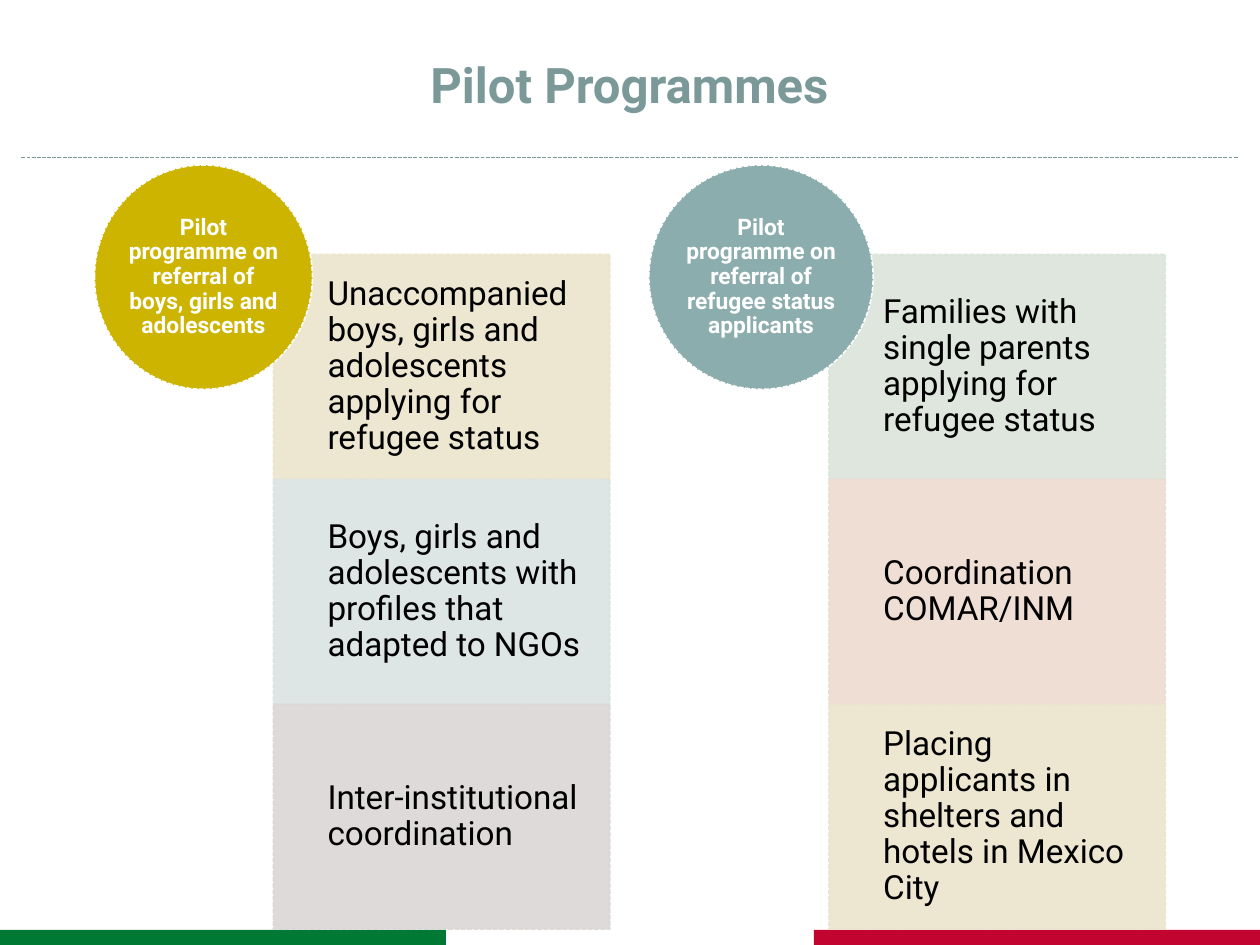
from dataclasses import dataclass

from lxml.etree import SubElement
from pptx import Presentation
from pptx.dml.color import RGBColor
from pptx.enum.dml import MSO_LINE
from pptx.enum.shapes import MSO_CONNECTOR, MSO_SHAPE as SHAPE
from pptx.enum.text import MSO_ANCHOR as ANCHOR, PP_ALIGN as ALIGN
from pptx.oxml.ns import qn
from pptx.util import Inches, Pt

COLS, ROWS = 100, 75
FONT = "Roboto"
BOX_LEFT, BOX_TOP, BOX_W, BOX_H = 21.7, 20.2, 26.7, 17.85
PILOT_STEP = 44.1
CIRCLE_TOP, CIRCLE_H = 13.1, 17.8
BAR_W, BAR_H = 35.4, 1.2


@dataclass
class Box:
    text: str
    color: str


@dataclass
class Pilot:
    name: str
    color: str
    circle_left: float
    circle_w: float
    boxes: list[Box]


PILOTS = [
    Pilot("Pilot programme on referral of boys, girls and adolescents", "CCB400", 7.5, 17.3, [
        Box("Unaccompanied boys, girls and adolescents applying for refugee status", "ECE5CC"),
        Box("Boys, girls and adolescents with profiles that adapted to NGOs", "DAE3E3"),
        Box("Inter-institutional coordination", "DAD7D5"),
    ]),
    Pilot("Pilot programme on referral of refugee status applicants", "8CADAE", 51.5, 17.8, [
        Box("Families with single parents applying for refugee status", "DBE4DA"),
        Box("Coordination COMAR/INM", "EEDBD0"),
        Box("Placing applicants in shelters and hotels in Mexico City", "ECE5CC"),
    ]),
]

prs = Presentation()
prs.slide_width, prs.slide_height = Inches(10), Inches(7.5)
s = prs.slides.add_slide(prs.slide_layouts[5])


def x(col: float) -> int:
    return round(prs.slide_width * col / COLS)


def y(row: float) -> int:
    return round(prs.slide_height * row / ROWS)


def rgb(color: str) -> RGBColor:
    return RGBColor.from_string(color)


def add_shape(kind, left: float, top: float, width: float, height: float, color: str):
    sp = s.shapes.add_shape(kind, x(left), y(top), x(width), y(height))
    sp.shadow.inherit = False
    sp.fill.solid()
    sp.fill.fore_color.rgb = rgb(color)
    sp.line.fill.background()
    return sp


def dash(line, color: str, width: float) -> None:
    line.color.rgb = rgb(color)
    line.width = Pt(width)
    line.dash_style = MSO_LINE.SQUARE_DOT


def set_alpha(sp, percent: int) -> None:
    for clr in sp.element.spPr.iter(qn("a:srgbClr")):
        SubElement(clr, qn("a:alpha"), val=str(percent * 1000))


def write(sp, text: str, size: float, color: str, align=ALIGN.LEFT,
          bold: bool = False, spacing: float = 0.9) -> None:
    tf = sp.text_frame
    tf.text = text
    tf.word_wrap = True
    tf.vertical_anchor = ANCHOR.MIDDLE
    p = tf.paragraphs[0]
    p.alignment, p.line_spacing = align, spacing
    font = p.runs[0].font
    font.name, font.size, font.bold = FONT, Pt(size), bold
    font.color.rgb = rgb(color)


def set_margins(sp, left: float, top: float, right: float, bottom: float) -> None:
    tf = sp.text_frame
    tf.margin_left, tf.margin_right = x(left), x(right)
    tf.margin_top, tf.margin_bottom = y(top), y(bottom)


def add_frame() -> None:
    add_shape(SHAPE.RECTANGLE, 0, ROWS - BAR_H, BAR_W, BAR_H, "007935")
    add_shape(SHAPE.RECTANGLE, COLS - BAR_W, ROWS - BAR_H, BAR_W, BAR_H, "C20430")
    rule = s.shapes.add_connector(MSO_CONNECTOR.STRAIGHT, x(1.7), y(12.5), x(98.3), y(12.5))
    dash(rule.line, "7C999A", 0.75)
    SubElement(rule.element.spPr, qn("a:effectLst"))


def add_title(text: str) -> None:
    title = s.shapes.title
    title.left, title.top, title.width, title.height = x(3.3), y(2.5), x(93.3), y(8.3)
    write(title, text, 28, "7C999A", ALIGN.CENTER, bold=True, spacing=1.0)


def add_pilot(pilot: Pilot, left: float) -> None:
    for i, box in enumerate(pilot.boxes):
        sp = add_shape(SHAPE.RECTANGLE, left, BOX_TOP + i * BOX_H, BOX_W, BOX_H, box.color)
        dash(sp.line, box.color, 0.9)
        set_alpha(sp, 90)
        set_margins(sp, 4.3, 1.5, 1.4, 1.5)
        write(sp, box.text, 19, "000000")
    circle = add_shape(SHAPE.OVAL, pilot.circle_left, CIRCLE_TOP,
                       pilot.circle_w, CIRCLE_H, pilot.color)
    dash(circle.line, "FFFFFF", 0.9)
    set_margins(circle, 0, 0, 0, 0)
    write(circle, pilot.name, 13, "FFFFFF", ALIGN.CENTER, bold=True)


add_frame()
add_title("Pilot Programmes")
for i, pilot in enumerate(PILOTS):
    add_pilot(pilot, BOX_LEFT + i * PILOT_STEP)
prs.save("out.pptx")
